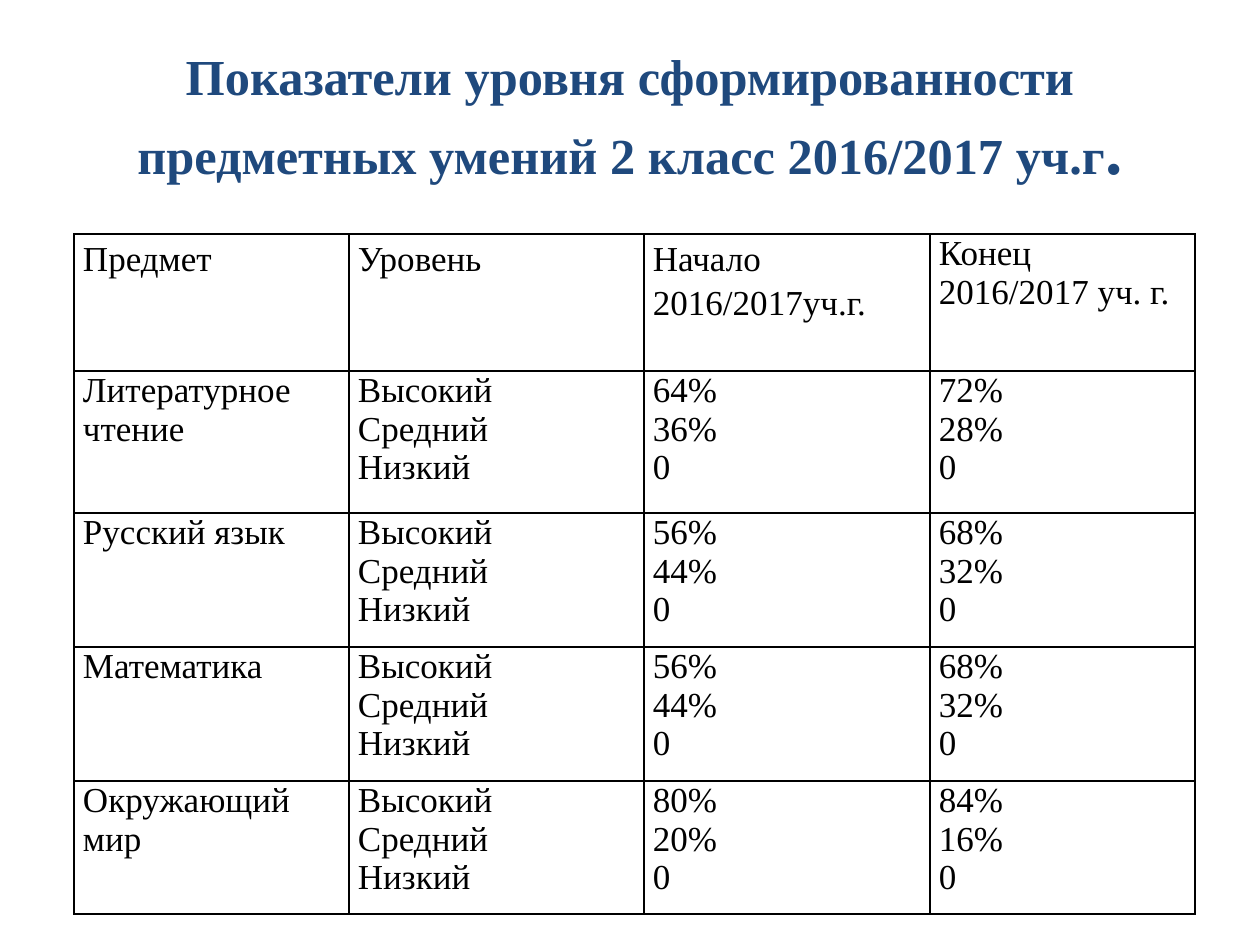
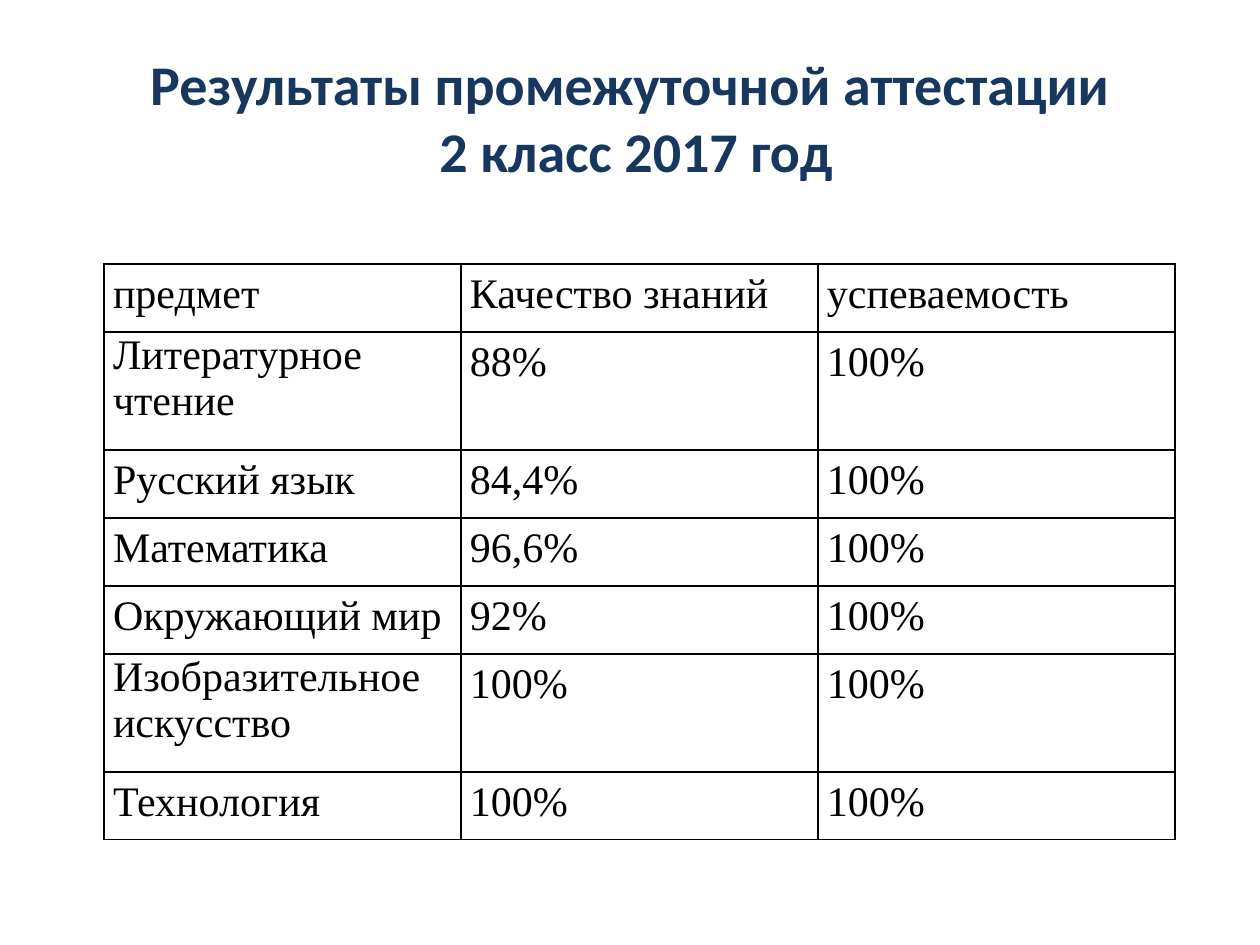
import pptx
import pptx.util
import pptx.dml.color
import pptx.enum.text
import pptx.oxml
import pptx.oxml.ns

RGBColor = pptx.dml.color.RGBColor
Pt = pptx.util.Pt
Align = pptx.enum.text.PP_ALIGN

BLACK = RGBColor(0, 0, 0)
BLUE = RGBColor(0x1F, 0x49, 0x7D)
NAVY = RGBColor(0x17, 0x37, 0x5E)
SERIF = "Times New Roman"
SANS = "Calibri"
SCALE = 914400 / 126

LEVELS = "Высокий\nСредний\nНизкий"

SKILLS = dict(
    title=[("Показатели уровня сформированности предметных умений 2 класс 2016/2017 уч.г", 28.8),
           (".", 39.6)],
    face=SERIF, color=BLUE, left=74, top=234, size=20, body=Align.LEFT,
    cols=[275, 295, 286, 265], heights=[137, 142, 134, 134, 133],
    rows=[
        ("Предмет", "Уровень", "Начало  2016/2017уч.г.", "Конец \n2016/2017 уч. г."),
        ("Литературное\nчтение", LEVELS, "64%\n36%\n0", "72%\n28%\n0"),
        ("Русский язык", LEVELS, "56%\n44%\n0", "68%\n32%\n0"),
        ("Математика", LEVELS, "56%\n44%\n0", "68%\n32%\n0"),
        ("Окружающий мир", LEVELS, "80%\n20%\n0", "84%\n16%\n0"),
    ])

RESULTS = dict(
    title=[("Результаты промежуточной аттестации\v 2 класс 2017 год", 32)],
    face=SANS, color=NAVY, left=104, top=264, size=24, body=Align.JUSTIFY,
    cols=[357, 357, 357], heights=[68, 118, 68, 68, 68, 118, 68],
    rows=[
        ("предмет", "Качество знаний", "успеваемость"),
        ("Литературное \nчтение", "88%", "100%"),
        ("Русский язык", "84,4%", "100%"),
        ("Математика", "96,6%", "100%"),
        ("Окружающий мир", "92%", "100%"),
        ("Изобразительное\nискусство", "100%", "100%"),
        ("Технология", "100%", "100%"),
    ])


def px(num):
    return round(num * SCALE)


def add_title(slide, data):
    box = slide.shapes.add_textbox(px(63), px(38), px(1134), px(157))
    frame = box.text_frame
    frame.word_wrap = True
    frame.vertical_anchor = pptx.enum.text.MSO_ANCHOR.MIDDLE
    para = frame.paragraphs[0]
    para.alignment = Align.CENTER
    para.font.name = data["face"]
    para.font.bold = True
    for text, size in data["title"]:
        for part, line in enumerate(text.split("\v")):
            if part:
                para.add_line_break()
            run = para.add_run()
            run.text = line
            run.font.name = data["face"]
            run.font.bold = True
            run.font.size = Pt(size)
            run.font.color.rgb = data["color"]


def add_edges(cell):
    props = cell._tc.get_or_add_tcPr()
    for spot, side in enumerate("LRTB"):
        props.insert(spot, pptx.oxml.parse_xml(
            f'<a:ln{side} {pptx.oxml.ns.nsdecls("a")} w="{Pt(1)}"><a:solidFill>'
            f'<a:srgbClr val="{BLACK}"/></a:solidFill></a:ln{side}>'))


def fill_cell(cell, text, size, align):
    cell.margin_left = cell.margin_right = px(9)
    cell.margin_top = cell.margin_bottom = 0
    cell.fill.background()
    add_edges(cell)
    cell.text = text
    loose = align == Align.JUSTIFY and "\n" not in text
    for para in cell.text_frame.paragraphs:
        para.alignment = align
        para.font.name = SERIF
        para.font.size = Pt(size)
        para.font.bold = False
        para.font.color.rgb = BLACK
        if loose:
            para.line_spacing = 1.15
            para.space_after = Pt(10)


def add_grid(slide, data):
    rows, cols, heights = data["rows"], data["cols"], data["heights"]
    table = slide.shapes.add_table(
        len(rows), len(cols), px(data["left"]), px(data["top"]),
        px(sum(cols)), px(sum(heights))).table
    table.first_row = table.horz_banding = False
    for col, width in zip(table.columns, cols):
        col.width = px(width)
    for num, (row, high, texts) in enumerate(zip(table.rows, heights, rows)):
        row.height = px(high)
        align = data["body"] if num else Align.JUSTIFY
        for cell, text in zip(row.cells, texts):
            fill_cell(cell, text, data["size"], align)


def main():
    deck = pptx.Presentation()
    deck.slide_width, deck.slide_height = px(1260), px(945)
    for data in (SKILLS, RESULTS):
        slide = deck.slides.add_slide(deck.slide_layouts[6])
        add_title(slide, data)
        add_grid(slide, data)
    deck.save("out.pptx")


if __name__ == "__main__":
    main()
